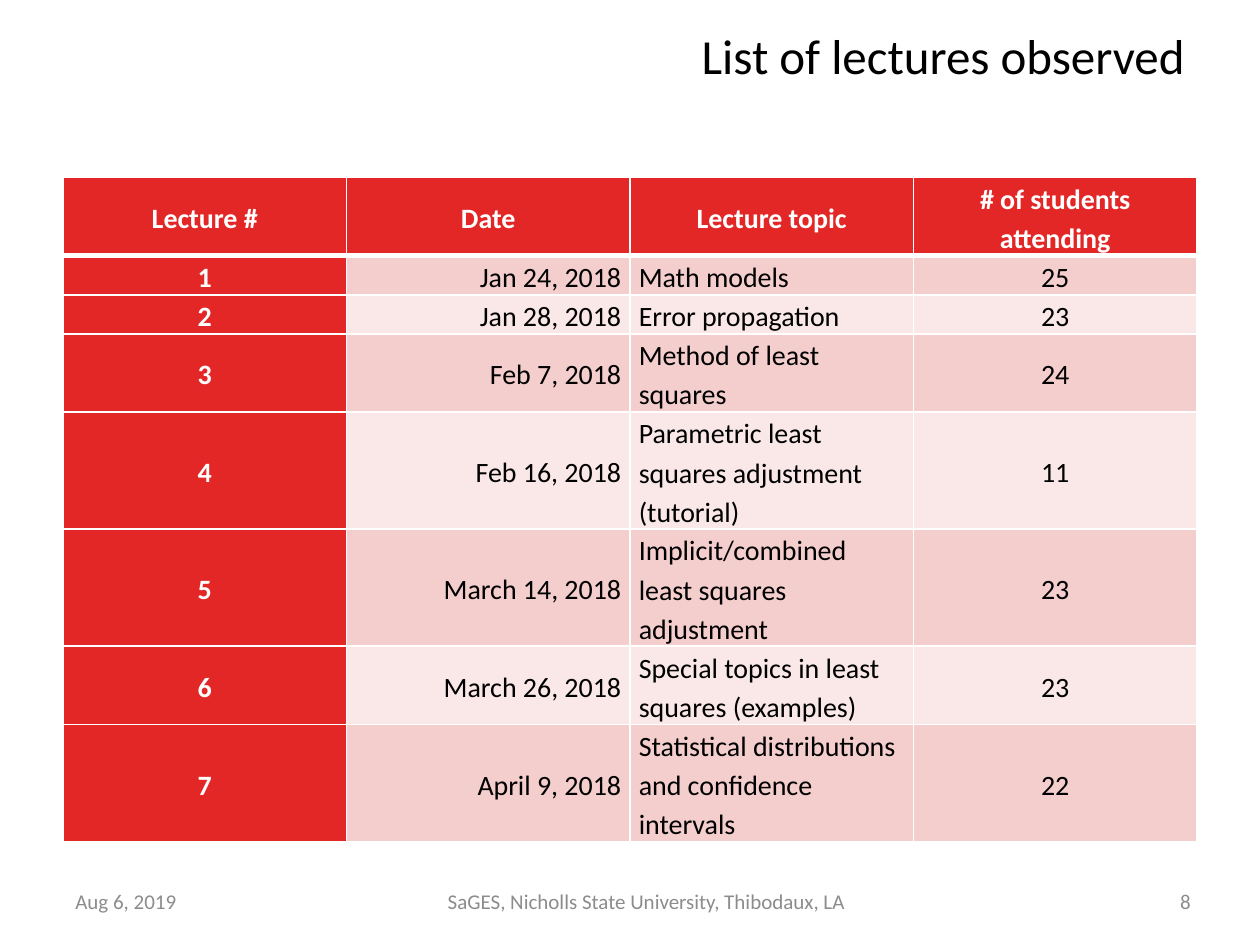
"""Build the slide that lists the lectures observed."""
import pptx
import pptx.dml.color
import pptx.enum.text
import pptx.oxml
import pptx.oxml.ns
import pptx.util

Inches = pptx.util.Inches
Pt = pptx.util.Pt
ALIGN = pptx.enum.text.PP_ALIGN
MIDDLE = pptx.enum.text.MSO_ANCHOR.MIDDLE

COLORS = {
    "black": "000000",
    "white": "FFFFFF",
    "grey": "8C8C8C",
    "red": "E32726",
    "odd": "F4CDCD",
    "even": "FAE8E8",
}
HEADERS = ("Lecture #", "Date", "Lecture topic", "# of students\nattending")
LECTURES = (
    ("Jan 24, 2018", "Math models", 25),
    ("Jan 28, 2018", "Error propagation", 23),
    ("Feb 7, 2018", "Method of least squares", 24),
    ("Feb 16, 2018", "Parametric least squares adjustment (tutorial)", 11),
    ("March 14, 2018", "Implicit/combined least squares adjustment", 23),
    ("March 26, 2018", "Special topics in least squares (examples)", 23),
    ("April 9, 2018", "Statistical distributions and confidence intervals", 22),
)
LINES_PER_ROW = (2, 1, 1, 2, 3, 3, 2, 3)
COLUMN_ALIGNS = (ALIGN.CENTER, ALIGN.RIGHT, ALIGN.LEFT, ALIGN.CENTER)


def rgb(name):
    return pptx.dml.color.RGBColor.from_string(COLORS[name])


def style_paragraph(paragraph, size, color, align, bold=False):
    paragraph.alignment = align
    paragraph.font.name = "Calibri"
    paragraph.font.size = Pt(size)
    paragraph.font.bold = bold
    paragraph.font.color.rgb = rgb(color)


def add_text(page, text, place, size, color, align):
    box = page.shapes.add_textbox(*map(Inches, place))
    frame = box.text_frame
    frame.word_wrap = True
    frame.vertical_anchor = MIDDLE
    frame.text = text
    style_paragraph(frame.paragraphs[0], size, color, align)


def set_borders(cell, widths):
    properties = cell._tc.get_or_add_tcPr()
    for side, width in zip("LRTB", widths):
        properties.append(pptx.oxml.parse_xml(
            f'<a:ln{side} {pptx.oxml.ns.nsdecls("a")} w="{Pt(width)}"><a:solidFill>'
            f'<a:srgbClr val="{COLORS["white"]}"/></a:solidFill></a:ln{side}>'))


def fill_cell(cell, text, fill, color, align, bold, widths):
    cell.text = text
    cell.vertical_anchor = MIDDLE
    cell.margin_left = cell.margin_right = Inches(0.07)
    cell.margin_top = cell.margin_bottom = 0
    set_borders(cell, widths)
    cell.fill.solid()
    cell.fill.fore_color.rgb = rgb(fill)
    for paragraph in cell.text_frame.paragraphs:
        style_paragraph(paragraph, 16, color, align, bold)
        paragraph.line_spacing = 1.15


def add_lecture_table(page):
    rows = [HEADERS] + [(number, *lecture) for number, lecture in enumerate(LECTURES, 1)]
    line_height = 0.31
    table = page.shapes.add_table(
        len(rows), len(HEADERS), Inches(0.5), Inches(1.41),
        Inches(9), Inches(line_height * sum(LINES_PER_ROW))).table
    for r, values in enumerate(rows):
        table.rows[r].height = Inches(line_height * LINES_PER_ROW[r])
        widths = (1, 1, 3 if r == 1 else 1, 3 if r == 0 else 1)
        for c, value in enumerate(values):
            strong = r == 0 or c == 0
            band = "odd" if r % 2 else "even"
            fill_cell(table.cell(r, c), str(value),
                      "red" if strong else band,
                      "white" if strong else "black",
                      ALIGN.CENTER if r == 0 else COLUMN_ALIGNS[c],
                      strong, widths)


def main():
    deck = pptx.Presentation()
    deck.slide_width, deck.slide_height = Inches(10), Inches(7.5)
    page = deck.slides.add_slide(deck.slide_layouts[6])
    add_text(page, "List of lectures observed", (1.47, 0, 8.03, 0.87), 28, "black", ALIGN.RIGHT)
    add_lecture_table(page)
    footers = (
        ("Aug 6, 2019", 0.5, 1.14, ALIGN.LEFT),
        ("SaGES, Nicholls State University, Thibodaux, LA", 2.22, 5.82, ALIGN.CENTER),
        ("8", 8.61, 0.94, ALIGN.RIGHT),
    )
    for text, left, width, align in footers:
        add_text(page, text, (left, 6.95, width, 0.4), 12, "grey", align)
    deck.save("out.pptx")


if __name__ == "__main__":
    main()
